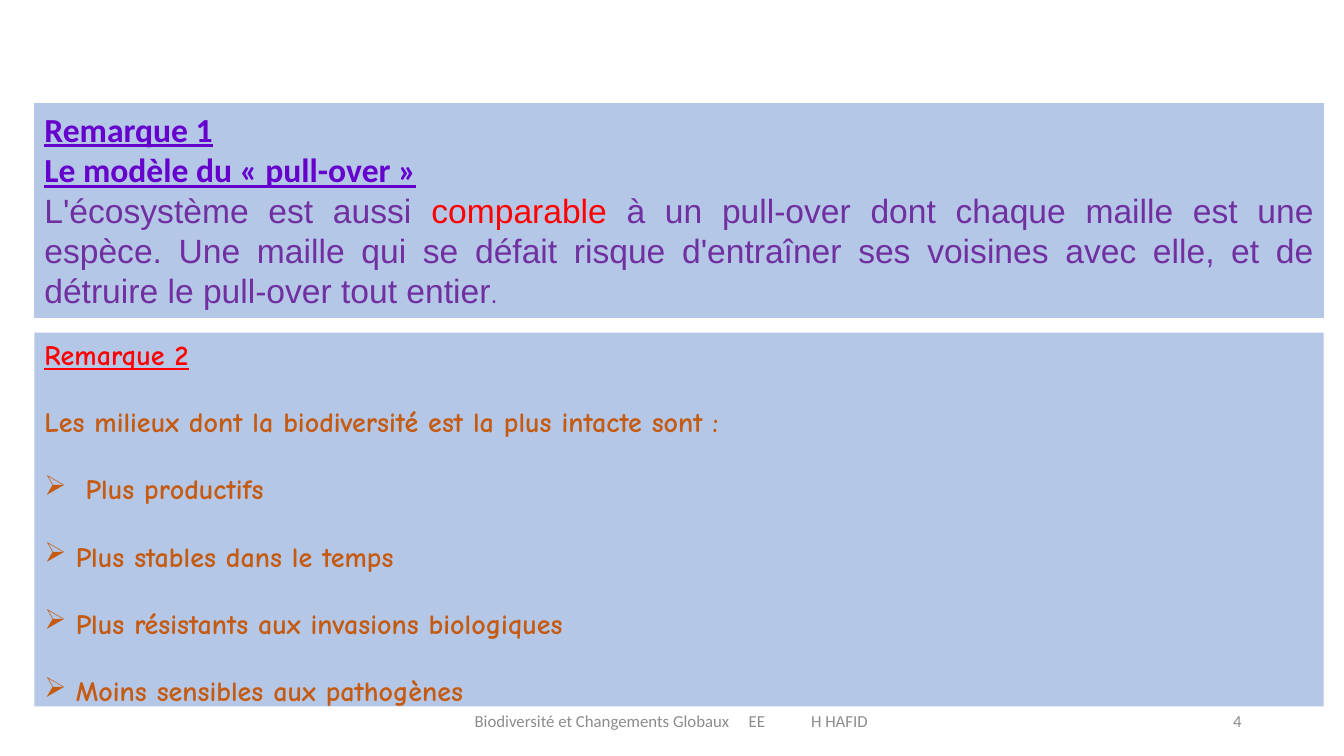
from lxml.etree import SubElement
from pptx import Presentation
from pptx.dml.color import RGBColor
from pptx.enum.shapes import MSO_SHAPE as Shape
from pptx.enum.text import MSO_ANCHOR as Anchor, PP_ALIGN as Align
from pptx.oxml.ns import qn
from pptx.util import Cm, Pt

PANEL = RGBColor(0xB4, 0xC7, 0xE7)
VIOLET = RGBColor(0x66, 0x00, 0xCC)
PURPLE = RGBColor(0x70, 0x30, 0xA0)
RED = RGBColor(0xFF, 0x00, 0x00)
ORANGE = RGBColor(0xC5, 0x5A, 0x11)
GREY = RGBColor(0x8C, 0x8C, 0x8C)

HEADING = {"name": "Calibri", "size": Pt(24), "bold": True, "underline": True, "color": VIOLET}
BODY = {"name": "Arial", "size": Pt(24), "bold": False, "color": PURPLE}
STRESS = {**BODY, "color": RED}
STOP = {**BODY, "size": Pt(18)}
POINT = {"name": "Comic Neue", "size": Pt(20), "bold": True, "color": ORANGE}
POINT_HEADING = {**POINT, "underline": True, "color": RED}
FOOTER = {"name": "Calibri", "size": Pt(12), "color": GREY}

PULLOVER = [
    [("Remarque 1", HEADING)],
    [("Le modèle du «\u00a0pull-over\u00a0»", HEADING)],
    [
        ("L'écosystème est aussi ", BODY),
        ("comparable ", STRESS),
        ("à un pull-over dont chaque maille est une espèce. Une maille qui se défait risque "
         "d'entraîner ses voisines avec elle, et de détruire le pull-over tout entier", BODY),
        (".", STOP),
    ],
]
INTACT_HEADING = "Remarque 2"
INTACT_INTRO = "Les milieux dont la biodiversité est la plus intacte sont :"
INTACT_POINTS = [
    " Plus productifs",
    "Plus stables dans le temps",
    "Plus résistants aux invasions biologiques",
    "Moins sensibles aux pathogènes",
]
COURSE = "Biodiversité et Changements Globaux\tEE\tH HAFID"
PAGE = "4"

PANEL_LEFT, PANEL_WIDTH = Cm(0.87), Cm(32.49)
FOOTER_TOP, FOOTER_HEIGHT = Cm(17.65), Cm(1.01)
COURSE_TABS = (Cm(6.91), Cm(8.48))
BULLET_INDENT = Cm(0.79)


def add_run(paragraph, wording, look):
    """Append formatted wording to a paragraph."""
    run = paragraph.add_run()
    run.text = wording
    for key, value in look.items():
        if key == "color":
            run.font.color.rgb = value
        else:
            setattr(run.font, key, value)


def add_panel(slide, top, height):
    """Add a full-width blue panel and return it."""
    panel = slide.shapes.add_shape(Shape.RECTANGLE, PANEL_LEFT, top, PANEL_WIDTH, height)
    panel.shadow.inherit = False
    panel.fill.solid()
    panel.fill.fore_color.rgb = PANEL
    panel.line.fill.background()
    panel.text_frame.word_wrap = True
    panel.text_frame.vertical_anchor = Anchor.TOP
    return panel


def add_paragraph(frame, runs, align=Align.LEFT):
    """Fill the empty first paragraph or add the next one."""
    first = frame.paragraphs[0]
    paragraph = frame.add_paragraph() if first.runs else first
    paragraph.alignment = align
    for wording, look in runs:
        add_run(paragraph, wording, look)
    return paragraph


def add_bullet(paragraph):
    """Give a paragraph an arrow bullet and a hanging indent."""
    props = paragraph._p.get_or_add_pPr()
    props.set("marL", str(BULLET_INDENT))
    props.set("indent", str(-BULLET_INDENT))
    SubElement(props, qn("a:buChar"), char="➢")


def add_footer(slide, left, width, wording, align):
    """Add one footer box and return it."""
    box = slide.shapes.add_textbox(left, FOOTER_TOP, width, FOOTER_HEIGHT)
    box.text_frame.word_wrap = True
    box.text_frame.vertical_anchor = Anchor.MIDDLE
    add_paragraph(box.text_frame, [(wording, FOOTER)], align)
    return box


def main():
    """Build the slide on the two remarks about biodiversity."""
    deck = Presentation()
    deck.slide_width, deck.slide_height = Cm(33.87), Cm(19.05)
    slide = deck.slides.add_slide(deck.slide_layouts[6])

    course = add_footer(slide, Cm(11.22), Cm(11.43), COURSE, Align.LEFT).text_frame
    course.margin_left = Cm(0.74)
    tabs = SubElement(course.paragraphs[0]._p.get_or_add_pPr(), qn("a:tabLst"))
    for position in COURSE_TABS:
        SubElement(tabs, qn("a:tab"), pos=str(position), algn="l")
    add_footer(slide, Cm(23.92), Cm(7.62), PAGE, Align.RIGHT)

    pullover = add_panel(slide, Cm(2.62), Cm(5.38))
    pullover.line.color.rgb = PANEL
    pullover.line.width = Pt(0.75)
    for runs in PULLOVER:
        add_paragraph(pullover.text_frame, runs, Align.JUSTIFY)

    intact = add_panel(slide, Cm(8.38), Cm(9.42)).text_frame
    add_paragraph(intact, [(INTACT_HEADING, POINT_HEADING)])
    add_paragraph(intact, [(INTACT_INTRO, POINT)]).space_before = Pt(24)
    for wording in INTACT_POINTS:
        point = add_paragraph(intact, [(wording, POINT)])
        point.line_spacing = 2.0
        add_bullet(point)

    deck.save("out.pptx")


if __name__ == "__main__":
    main()
